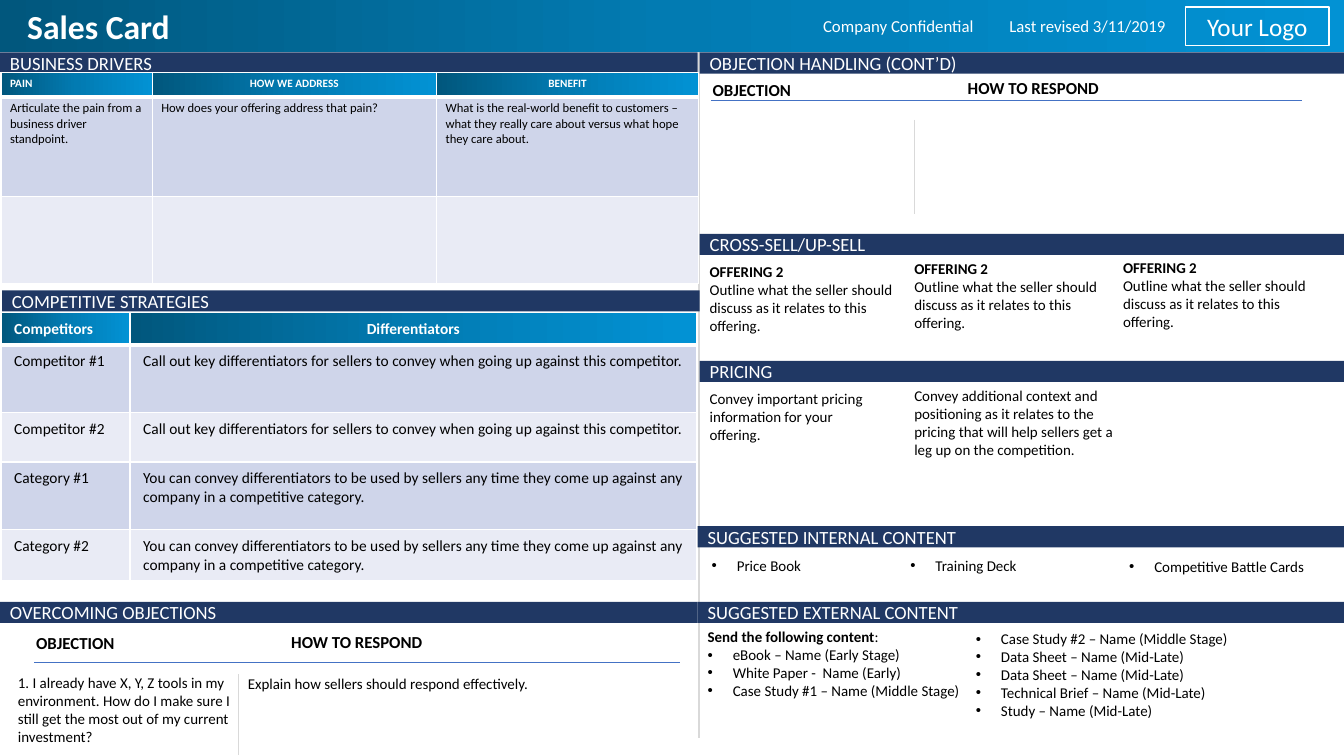
from copy import deepcopy
from dataclasses import dataclass
from pptx import Presentation, util as u
from pptx.dml.color import RGBColor
from pptx.enum import shapes, text
from pptx.oxml import parse_xml
from pptx.oxml.ns import nsdecls, qn


@dataclass(frozen=True)
class Theme:
    font: str = "Calibri"
    white: str = "FFFFFF"
    black: str = "000000"
    navy: str = "203864"
    rule: str = "4472C4"
    divider: str = "D9D9D9"
    gradient: tuple = ("01577D", "027BB2", "0292D4")
    rows: tuple = ("CFD5EA", "E9EBF5")
    title: float = 24
    logo: float = 18
    band: float = 13.3
    label: float = 12
    body: float = 10.7
    table: float = 11
    small_head: float = 8
    small: float = 9


T = Theme()
PX = 9144
W, H = 1333, 750

BANDS = [
    ("BUSINESS DRIVERS", 0, 52, 692),
    ("COMPETITIVE STRATEGIES", 2, 288, 692),
    ("OVERCOMING OBJECTIONS", 0, 597, 692),
    ("OBJECTION HANDLING (CONT’D)", 694, 52, 639),
    ("CROSS-SELL/UP-SELL", 694, 232, 639),
    ("PRICING", 694, 358, 639),
    ("SUGGESTED INTERNAL CONTENT", 692, 522, 643),
    ("SUGGESTED EXTERNAL CONTENT", 692, 597, 643),
]
OFFERING = [[
    ("OFFERING 2\n", True),
    ("Outline what the seller should discuss as it relates to this offering.", False),
]]
OFFERING_SPOTS = [(694, 256), (897, 253), (1104, 252)]
BODY = [
    ((694, 382, 190, 64), ["Convey important pricing information for your offering."]),
    ((897, 379, 227, 82), ["Convey additional context and positioning as it relates to the "
                           "pricing that will help sellers get a leg up on the competition."]),
    ((696, 547, 208, 28), ["• Price Book"]),
    ((893, 547, 214, 28), ["• Training Deck"]),
    ((1110, 548, 214, 28), ["• Competitive Battle Cards"]),
    ((692, 618, 316, 82), [
        [("Send the following content", True), (":", False)],
        "• eBook – Name (Early Stage)",
        "• White Paper -  Name (Early)",
        "• Case Study #1 – Name (Middle Stage)",
    ]),
    ((958, 620, 316, 100), [
        "• Case Study #2 – Name (Middle Stage)",
        "• Data Sheet – Name (Mid-Late)",
        "• Data Sheet – Name (Mid-Late)",
        "• Technical Brief – Name (Mid-Late)",
        "• Study – Name (Mid-Late)",
    ]),
    ((8, 663, 236, 82), ["1. I already have X, Y, Z tools in my environment. How do I make "
                         "sure I still get the most out of my current investment?"]),
    ((236, 664, 450, 28), ["Explain how sellers should respond effectively."]),
]
HEADINGS = [
    ("OBJECTION", 26, 623), ("HOW TO RESPOND", 279, 622),
    ("OBJECTION", 697, 74), ("HOW TO RESPOND", 950, 72),
]
HEADER_NOTES = [
    ("Last revised 3/11/2019", 964, text.PP_ALIGN.RIGHT),
    ("Company Confidential", 790, text.PP_ALIGN.CENTER),
]
LINES = [
    (693, 52, 693, 732, T.divider, 1.5),
    (236, 669, 236, 749, T.divider, 0.5),
    (907, 119, 907, 212, T.divider, 0.5),
    (34, 657, 674, 657, T.rule, 0.5),
    (705, 100, 1291, 100, T.rule, 0.5),
]
CALL_OUT = "Call out key differentiators for sellers to convey when going up against this competitor."
CONVEY = ("You can convey differentiators to be used by sellers any time they come up "
          "against any company in a competitive category.")
TABLES = [
    dict(at=(1, 310), cols=[128, 562], rows=[31, 67, 49, 67, 49],
         sizes=(T.table, T.table), margins=(13, 7), cells=[
             ["Competitors", "Differentiators"],
             ["Competitor #1", CALL_OUT],
             ["Competitor #2", CALL_OUT],
             ["Category #1", CONVEY],
             ["Category #2", CONVEY],
         ]),
    dict(at=(1, 72), cols=[150, 282, 260], rows=[24, 99, 86],
         sizes=(T.small_head, T.small), margins=(9, 4), cells=[
             ["PAIN", "HOW WE ADDRESS", "BENEFIT"],
             ["Articulate the pain from a business driver standpoint.",
              "How does your offering address that pain?",
              "What is the real-world benefit to customers – what they really care "
              "about versus what hope they care about."],
             ["", "", ""],
         ]),
]


def px(*values):
    return [u.Emu(v * PX) for v in values]


def apply(obj, **formats):
    for name, value in formats.items():
        setattr(obj, name, value)


def solid(fill, color):
    fill.solid()
    fill.fore_color.rgb = RGBColor.from_string(color)


def blend(fill, owner):
    fill.gradient()
    stops = owner.find(".//" + qn("a:gsLst"))
    middle = deepcopy(stops[0])
    middle.set("pos", "50000")
    stops.insert(1, middle)
    owner.find(".//" + qn("a:lin")).set("ang", "0")
    for stop, color in zip(fill.gradient_stops, T.gradient):
        stop.color.rgb = RGBColor.from_string(color)


def write(tf, paragraphs, size, color=T.black, bold=False, align=text.PP_ALIGN.LEFT):
    for i, content in enumerate(paragraphs):
        p = tf.paragraphs[0] if i == 0 else tf.add_paragraph()
        p.alignment = align
        runs = [(content, bold)] if isinstance(content, str) else content
        if runs[0][0].startswith("• "):
            runs = [(runs[0][0][2:], bold)]
            pPr = p._p.get_or_add_pPr()
            pPr.set("marL", "228600")
            pPr.set("indent", "-228600")
            pPr.append(parse_xml(f'<a:buFont {nsdecls("a")} typeface="Arial"/>'))
            pPr.append(parse_xml(f'<a:buChar {nsdecls("a")} char="•"/>'))
        for words, weight in runs:
            r = p.add_run()
            r.text = words.rstrip("\n")
            apply(r.font, name=T.font, size=u.Pt(size), bold=weight)
            r.font.color.rgb = RGBColor.from_string(color)
            if words.endswith("\n"):
                p.add_line_break()


def add_text(s, box, paragraphs, size, **formats):
    tf = s.shapes.add_textbox(*px(*box)).text_frame
    apply(tf, word_wrap=True, auto_size=text.MSO_AUTO_SIZE.SHAPE_TO_FIT_TEXT)
    write(tf, paragraphs, size, **formats)


def add_rect(s, box):
    sp = s.shapes.add_shape(shapes.MSO_SHAPE.RECTANGLE, *px(*box))
    sp.shadow.inherit = False
    sp.line.fill.background()
    sp.text_frame.vertical_anchor = text.MSO_ANCHOR.MIDDLE
    return sp


def add_line(s, x1, y1, x2, y2, color, width):
    line = s.shapes.add_connector(shapes.MSO_CONNECTOR.STRAIGHT, *px(x1, y1, x2, y2))
    solid(line.line.fill, color)
    line.line.width = u.Pt(width)
    line._element.spPr.append(parse_xml(f'<a:effectLst {nsdecls("a")}/>'))


def add_borders(tcPr, bottom):
    widths = {"lnL": 1, "lnR": 1, "lnT": 1, "lnB": bottom}
    for i, (side, width) in enumerate(widths.items()):
        tcPr.insert(i, parse_xml(
            f'<a:{side} {nsdecls("a")} w="{width * 12700}"><a:solidFill>'
            f'<a:srgbClr val="{T.white}"/></a:solidFill></a:{side}>'))


def add_table(s, at, cols, rows, sizes, margins, cells):
    box = px(*at, sum(cols), sum(rows))
    table = s.shapes.add_table(len(rows), len(cols), *box).table
    table.horz_banding = False
    for column, width in zip(table.columns, cols):
        column.width = px(width)[0]
    side, top = px(*margins)
    for i, (height, row) in enumerate(zip(rows, cells)):
        table.rows[i].height = px(height)[0]
        head = i == 0
        for j, words in enumerate(row):
            cell = table.cell(i, j)
            apply(cell, margin_left=side, margin_right=side, margin_top=top, margin_bottom=top)
            tcPr = cell._tc.get_or_add_tcPr()
            if head:
                blend(cell.fill, tcPr)
            else:
                solid(cell.fill, T.rows[(i - 1) % 2])
            add_borders(tcPr, 3 if head else 1)
            if words:
                write(cell.text_frame, [words], sizes[0 if head else 1],
                      color=T.white if head else T.black, bold=head,
                      align=text.PP_ALIGN.CENTER if head and j else text.PP_ALIGN.LEFT)


def main():
    prs = Presentation()
    apply(prs, slide_width=px(W)[0], slide_height=px(H)[0])
    s = prs.slides.add_slide(prs.slide_layouts[5])

    header = add_rect(s, (0, 0, W, 52))
    blend(header.fill, header._element.spPr)
    s.shapes._spTree.insert(2, header._element)

    title = s.shapes.title
    apply(title, **dict(zip(("left", "top", "width", "height"), px(17, 9, 290, 38))))
    apply(title.text_frame, vertical_anchor=text.MSO_ANCHOR.MIDDLE,
          auto_size=text.MSO_AUTO_SIZE.NONE)
    write(title.text_frame, ["Sales Card"], T.title, color=T.white, bold=True)
    title.text_frame.paragraphs[0].line_spacing = 0.9

    for line in LINES:
        add_line(s, *line)
    for name, x, y, width in BANDS:
        band = add_rect(s, (x, y, width, 21))
        solid(band.fill, T.navy)
        write(band.text_frame, [name], T.band, color=T.white)
    for x, y in OFFERING_SPOTS:
        add_text(s, (x, y, 210, 82), OFFERING, T.body)
    for box, paragraphs in BODY:
        add_text(s, box, paragraphs, T.body)
    for name, x, y in HEADINGS:
        add_text(s, (x, y, 210, 30), [name], T.label, bold=True)
    for table in TABLES:
        add_table(s, **table)

    logo = add_rect(s, (1176, 7, 142, 38))
    logo.fill.background()
    solid(logo.line.fill, T.white)
    logo.line.width = u.Pt(1)
    write(logo.text_frame, ["Your Logo"], T.logo, color=T.white, align=text.PP_ALIGN.CENTER)
    for note, x, align in HEADER_NOTES:
        add_text(s, (x, 11, 202, 30), [note], T.label, color=T.white, align=align)

    prs.save("out.pptx")


if __name__ == "__main__":
    main()
